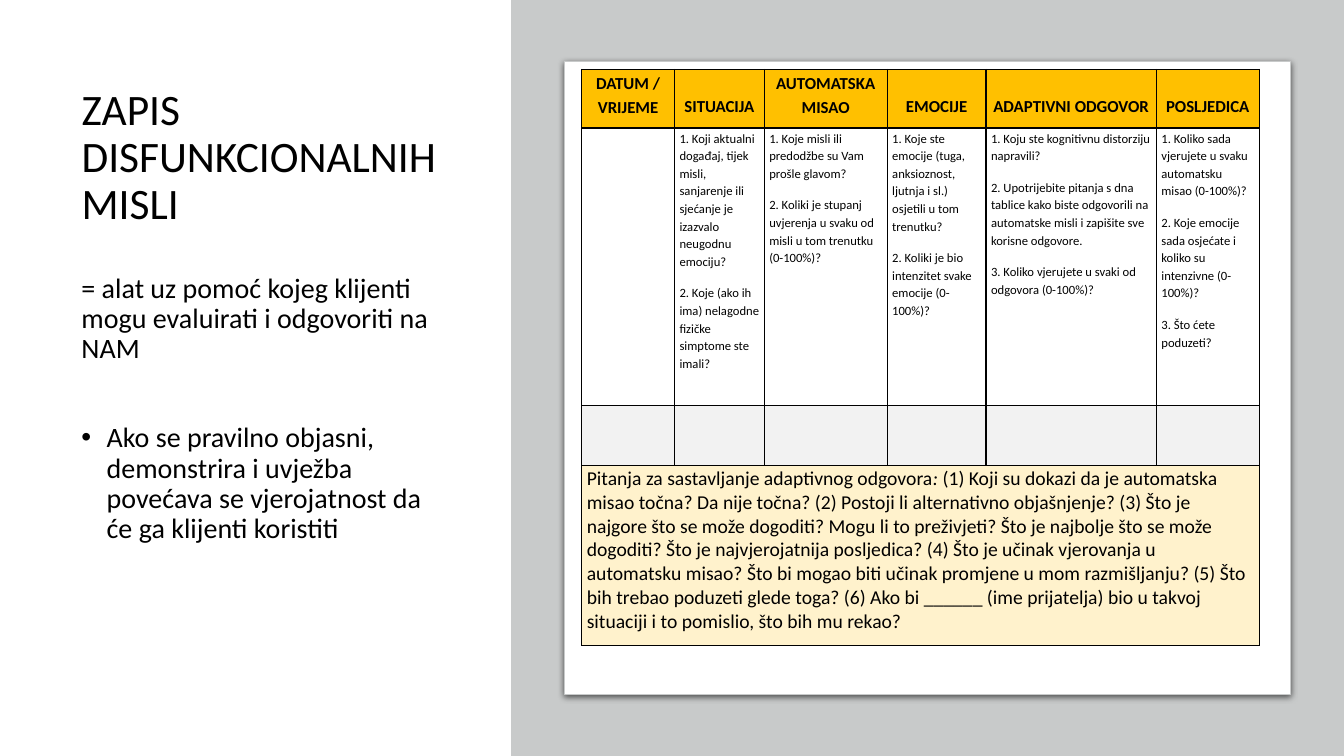
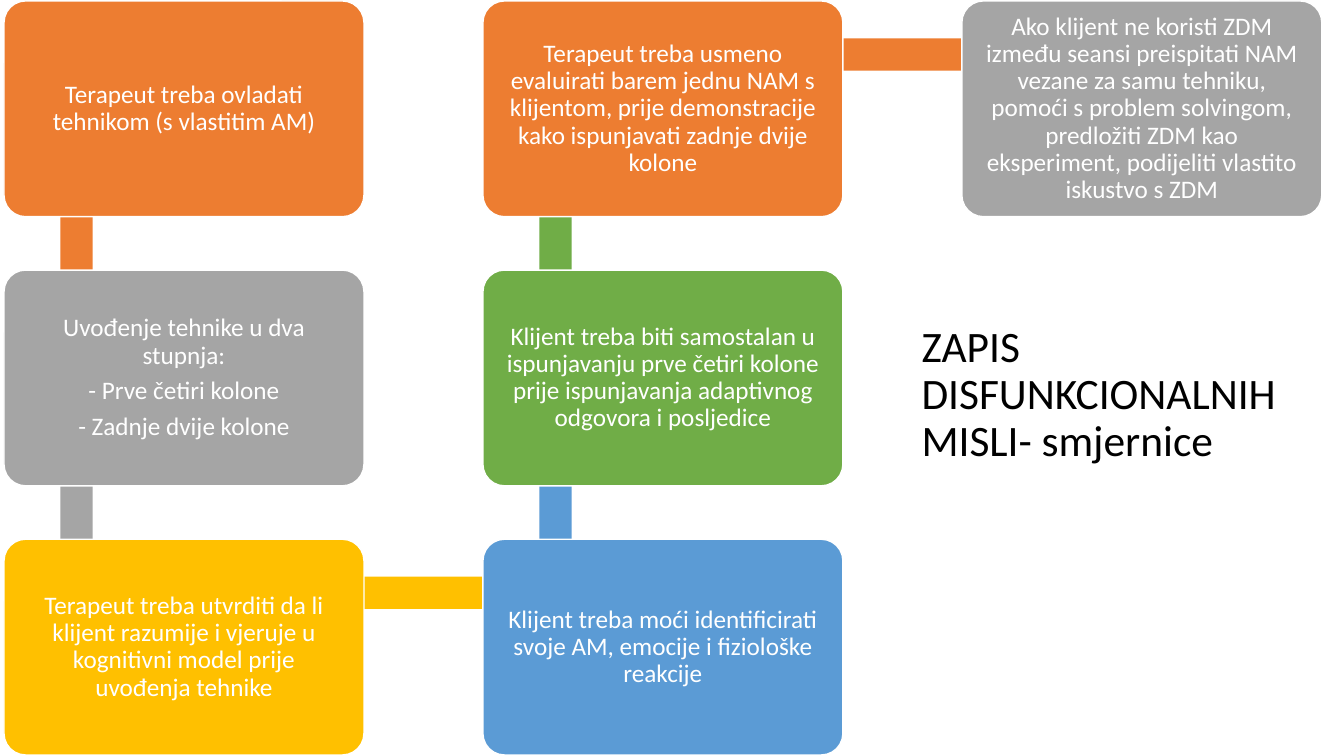
import lxml.etree
import pptx
import pptx.dml.color
import pptx.enum.shapes
import pptx.enum.text
import pptx.oxml
import pptx.oxml.ns
import pptx.util

Inches = pptx.util.Inches
Pt = pptx.util.Pt
Shape = pptx.enum.shapes.MSO_SHAPE
Align = pptx.enum.text.PP_ALIGN
Anchor = pptx.enum.text.MSO_ANCHOR
qn = pptx.oxml.ns.qn

FONT = "Calibri"
TITLE_SIZE = 31
COLORS = {
    "black": "000000", "white": "FFFFFF", "panel": "C8CACA",
    "orange": "ED7D31", "gray": "A5A5A5", "gold": "FFC000",
    "blue": "5B9BD5", "green": "70AD47",
    "empty row": "F2F2F2", "questions": "FFF2CC",
}

# Thought record table
COLUMN_WIDTHS = [0.92, 0.89, 1.22, 0.98, 1.69, 1.02]
ROW_HEIGHTS = [0.58, 2.75, 0.6, 1.78]
HEADINGS = ["DATUM / VRIJEME", "SITUACIJA", "AUTOMATSKA MISAO",
            "EMOCIJE", "ADAPTIVNI ODGOVOR", "POSLJEDICA"]
PROMPTS = [
    [],
    ["1. Koji aktualni događaj, tijek misli, sanjarenje ili sjećanje je izazvalo neugodnu emociju?",
     "2. Koje (ako ih ima) nelagodne fizičke simptome ste imali?"],
    ["1. Koje misli ili predodžbe su Vam prošle glavom?",
     "2. Koliki je stupanj uvjerenja u svaku od misli u tom trenutku (0-100%)?"],
    ["1. Koje ste emocije (tuga, anksioznost, ljutnja i sl.) osjetili u tom trenutku?",
     "2. Koliki je bio intenzitet svake emocije (0-100%)?"],
    ["1. Koju ste kognitivnu distorziju napravili?",
     "2. Upotrijebite pitanja s dna tablice kako biste odgovorili na automatske misli "
     "i zapišite sve korisne odgovore.",
     "3. Koliko vjerujete u svaki od odgovora (0-100%)?"],
    ["1. Koliko sada vjerujete u svaku automatsku misao (0-100%)?",
     "2. Koje emocije sada osjećate i koliko su intenzivne (0-100%)?",
     "3. Što ćete poduzeti?"],
]
QUESTIONS_LEAD = "Pitanja za sastavljanje adaptivnog odgovora"
QUESTIONS = (
    " (1) Koji su dokazi da je automatska misao točna? Da nije točna? "
    "(2) Postoji li alternativno objašnjenje? (3) Što je najgore što se može dogoditi? "
    "Mogu li to preživjeti? Što je najbolje što se može dogoditi? "
    "Što je najvjerojatnija posljedica? (4) Što je učinak vjerovanja u automatsku misao? "
    "Što bi mogao biti učinak promjene u mom razmišljanju? "
    "(5) Što bih trebao poduzeti glede toga? (6) Ako bi ______ (ime prijatelja) bio "
    "u takvoj situaciji i to pomislio, što bih mu rekao?"
)

# Guideline steps: column, row, colour, paragraphs
STEPS = [
    (0, 0, "orange", ["Terapeut treba ovladati tehnikom (s vlastitim AM)"]),
    (0, 1, "gray", ["Uvođenje tehnike u dva stupnja:",
                    "- Prve četiri kolone", "- Zadnje dvije kolone"]),
    (0, 2, "gold", ["Terapeut treba utvrditi da li klijent razumije i vjeruje u "
                    "kognitivni model prije uvođenja tehnike"]),
    (1, 2, "blue", ["Klijent treba moći identificirati svoje AM, emocije i "
                    "fiziološke reakcije"]),
    (1, 1, "green", ["Klijent treba biti samostalan u ispunjavanju prve četiri kolone "
                     "prije ispunjavanja adaptivnog odgovora i posljedice"]),
    (1, 0, "orange", ["Terapeut treba usmeno evaluirati barem jednu NAM s klijentom, "
                      "prije demonstracije kako ispunjavati zadnje dvije kolone"]),
    (2, 0, "gray", ["Ako klijent ne koristi ZDM između seansi preispitati NAM vezane "
                    "za samu tehniku, pomoći s problem solvingom, predložiti ZDM kao "
                    "eksperiment, podijeliti vlastito iskustvo s ZDM"]),
]
STEP_LEFT, STEP_TOP = 0.04, 0.01
STEP_WIDTH, STEP_HEIGHT = 3.57, 2.14
COLUMN_PITCH, ROW_PITCH = 4.75, 2.67
BAR_X, BAR_Y, BAR_THICKNESS = 0.72, 0.53, 0.32


def rgb(name):
    return pptx.dml.color.RGBColor.from_string(COLORS[name])


def format_runs(paragraph, size, color="black", bold=False):
    for run in paragraph.runs:
        run.font.name = FONT
        run.font.size = Pt(size)
        run.font.bold = bold
        run.font.color.rgb = rgb(color)


def write_paragraphs(text_frame, texts, size, color="black", bold=False,
                     align=Align.LEFT, line_spacing=0.9, space_after=0):
    text_frame.text = "\n".join(texts)
    for paragraph in text_frame.paragraphs:
        paragraph.alignment = align
        paragraph.line_spacing = line_spacing
        paragraph.space_after = Pt(space_after)
        format_runs(paragraph, size, color, bold)


def add_titled_slide(presentation, title_text, left, top):
    slide = presentation.slides.add_slide(presentation.slide_layouts[5])
    title = slide.shapes.title
    title.left, title.top = Inches(left), Inches(top)
    title.width, title.height = Inches(3.83), Inches(1.77)
    text_frame = title.text_frame
    text_frame.word_wrap = True
    text_frame.auto_size = pptx.enum.text.MSO_AUTO_SIZE.NONE
    text_frame.vertical_anchor = Anchor.MIDDLE
    write_paragraphs(text_frame, [title_text], TITLE_SIZE)
    return slide


def add_box(slide, kind, left, top, width, height, fill, line=None, line_width=1):
    shape = slide.shapes.add_shape(kind, Inches(left), Inches(top),
                                   Inches(width), Inches(height))
    shape.shadow.inherit = False
    shape.fill.solid()
    shape.fill.fore_color.rgb = rgb(fill)
    if line:
        shape.line.color.rgb = rgb(line)
        shape.line.width = Pt(line_width)
    else:
        shape.line.fill.background()
    return shape


def add_soft_shadow(shape):
    effects = shape._element.spPr.find(qn("a:effectLst"))
    shadow = lxml.etree.SubElement(
        effects, qn("a:outerShdw"), blurRad=str(Pt(4.5)), dist=str(Pt(1.5)),
        dir="5400000", algn="t", rotWithShape="0")
    color = lxml.etree.SubElement(shadow, qn("a:srgbClr"), val=COLORS["black"])
    lxml.etree.SubElement(color, qn("a:alpha"), val="63000")


def add_bullet(paragraph, indent):
    properties = paragraph._p.get_or_add_pPr()
    properties.set("marL", str(Inches(indent)))
    properties.set("indent", str(-Inches(indent)))
    font = lxml.etree.SubElement(properties, qn("a:buFont"))
    font.set("typeface", "Arial")
    lxml.etree.SubElement(properties, qn("a:buChar")).set("char", "•")


def add_description(slide):
    box = slide.shapes.add_textbox(Inches(0.71), Inches(2.67), Inches(3.83), Inches(4.14))
    text_frame = box.text_frame
    text_frame.word_wrap = True
    write_paragraphs(text_frame, [
        "= alat uz pomoć kojeg klijenti mogu evaluirati i odgovoriti na NAM",
        "Ako se pravilno objasni, demonstrira i uvježba povećava se vjerojatnost "
        "da će ga klijenti koristiti",
    ], 20)
    bullet = text_frame.paragraphs[1]
    bullet.space_before = Pt(42)
    add_bullet(bullet, 0.25)


def style_cell(cell, fill=None):
    properties = cell._tc.get_or_add_tcPr()
    for side in ("lnL", "lnR", "lnT", "lnB"):
        border = lxml.etree.SubElement(properties, qn("a:" + side), w=str(Pt(1)))
        solid = lxml.etree.SubElement(border, qn("a:solidFill"))
        lxml.etree.SubElement(solid, qn("a:srgbClr"), val=COLORS["black"])
    if fill:
        cell.fill.solid()
        cell.fill.fore_color.rgb = rgb(fill)
    else:
        cell.fill.background()
    cell.margin_left = cell.margin_right = Inches(0.05)
    cell.margin_top, cell.margin_bottom = Inches(0.01), Inches(0.11)


def add_thought_record(slide):
    frame = slide.shapes.add_table(
        len(ROW_HEIGHTS), len(COLUMN_WIDTHS), Inches(5.77), Inches(0.69),
        Inches(sum(COLUMN_WIDTHS)), Inches(sum(ROW_HEIGHTS)))
    table = frame.table
    table.first_row = table.horz_banding = False
    for column, width in zip(table.columns, COLUMN_WIDTHS):
        column.width = Inches(width)
    for row, height, fill in zip(table.rows, ROW_HEIGHTS,
                                 ["gold", None, "empty row", "questions"]):
        row.height = Inches(height)
        for cell in row.cells:
            style_cell(cell, fill)

    # Headings and prompts
    for index, (heading, prompts) in enumerate(zip(HEADINGS, PROMPTS)):
        cell = table.cell(0, index)
        cell.vertical_anchor = Anchor.BOTTOM
        write_paragraphs(cell.text_frame, [heading], 12, bold=True,
                         align=Align.CENTER, line_spacing=1.15, space_after=10)
        if prompts:
            write_paragraphs(table.cell(1, index).text_frame, prompts, 9,
                             line_spacing=1.15, space_after=10)

    # Questions across the full width
    questions = table.cell(3, 0)
    questions.merge(table.cell(3, len(COLUMN_WIDTHS) - 1))
    paragraph = questions.text_frame.paragraphs[0]
    for text in (QUESTIONS_LEAD, ":", QUESTIONS):
        run = paragraph.add_run()
        run.text = text
        run.font.italic = text == ":"
    format_runs(paragraph, 14)


def step_position(step):
    return STEP_LEFT + step[0] * COLUMN_PITCH, STEP_TOP + step[1] * ROW_PITCH


def add_step_bar(slide, step, next_step):
    (x1, y1), (x2, y2) = step_position(step), step_position(next_step)
    left, top = min(x1, x2) + BAR_X, min(y1, y2) + BAR_Y
    if x1 == x2:
        add_box(slide, Shape.RECTANGLE, left - BAR_THICKNESS / 2, top,
                BAR_THICKNESS, ROW_PITCH, step[2])
    else:
        add_box(slide, Shape.RECTANGLE, left, top - BAR_THICKNESS / 2,
                COLUMN_PITCH, BAR_THICKNESS, step[2])


def add_step(slide, step):
    left, top = step_position(step)
    shape = add_box(slide, Shape.ROUNDED_RECTANGLE, left, top,
                    STEP_WIDTH, STEP_HEIGHT, step[2], "white")
    shape.adjustments[0] = 0.1
    text_frame = shape.text_frame
    text_frame.word_wrap = True
    text_frame.vertical_anchor = Anchor.MIDDLE
    text_frame.margin_left = text_frame.margin_right = Inches(0.13)
    text_frame.margin_top = text_frame.margin_bottom = Inches(0.13)
    write_paragraphs(text_frame, step[3], 18, "white",
                     align=Align.CENTER, space_after=6)


def build_record_slide(presentation):
    slide = add_titled_slide(presentation, "ZAPIS DISFUNKCIONALNIH MISLI", 0.71, 0.69)
    add_description(slide)
    add_box(slide, Shape.RECTANGLE, 5.07, 0, 8.26, 7.5, "panel")
    card = add_box(slide, Shape.RECTANGLE, 5.6, 0.61, 7.2, 6.28, "white", "panel", 0.75)
    add_soft_shadow(card)
    add_thought_record(slide)


def build_guidelines_slide(presentation):
    slide = add_titled_slide(presentation, "ZAPIS DISFUNKCIONALNIH MISLI- smjernice",
                             9.04, 3.04)
    # Each bar lies behind the boxes it joins
    for step, next_step in zip(STEPS, STEPS[1:] + [None]):
        if next_step:
            add_step_bar(slide, step, next_step)
        add_step(slide, step)


def main():
    presentation = pptx.Presentation()
    presentation.slide_width = Inches(13.33)
    presentation.slide_height = Inches(7.5)
    build_record_slide(presentation)
    build_guidelines_slide(presentation)
    presentation.save("out.pptx")


if __name__ == "__main__":
    main()
